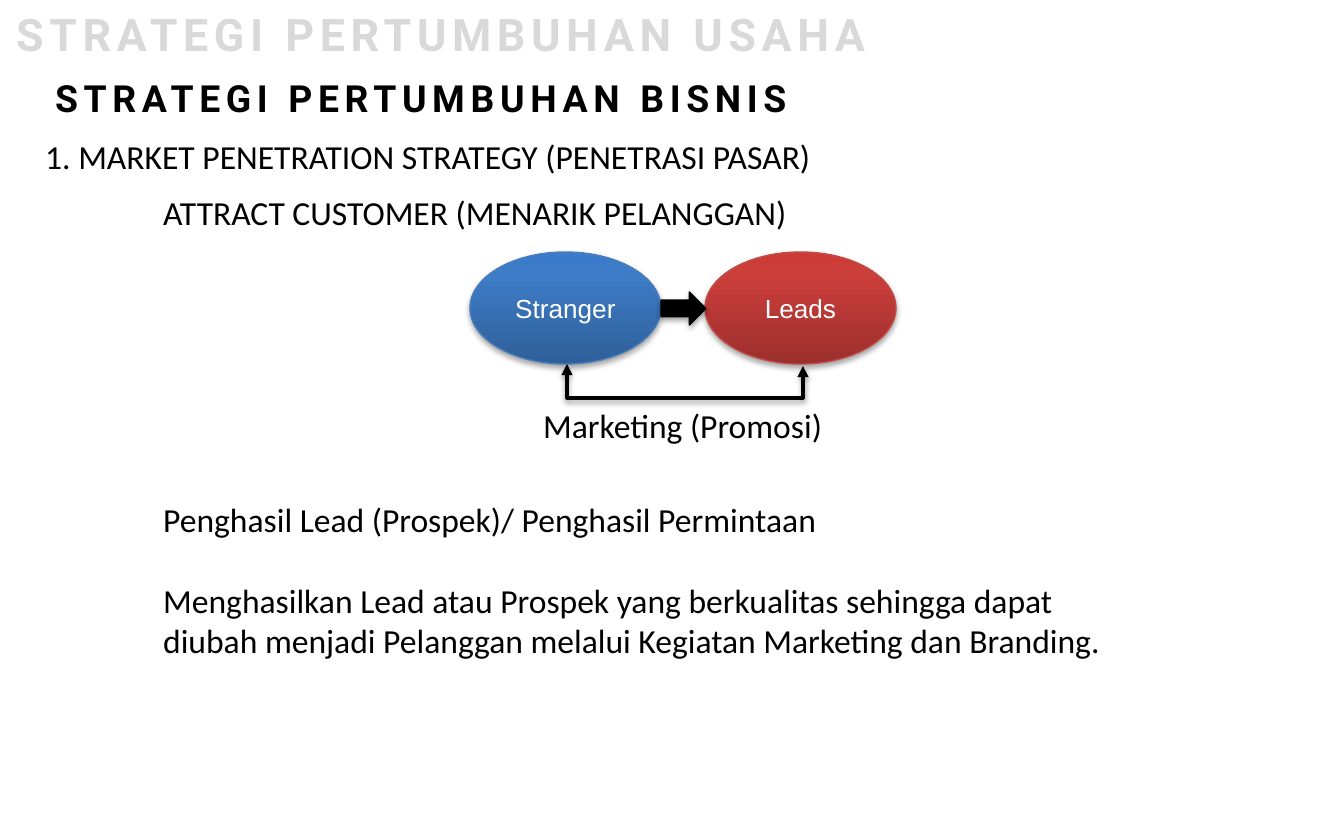
from copy import deepcopy

from lxml.etree import SubElement
from pptx import Presentation
from pptx.dml.color import RGBColor
from pptx.enum.shapes import MSO_CONNECTOR, MSO_SHAPE
from pptx.enum.text import MSO_ANCHOR, MSO_AUTO_SIZE, PP_ALIGN
from pptx.oxml.ns import qn
from pptx.util import Emu, Pt

SCALE = 914400 / 134.4
BLACK = RGBColor(0x00, 0x00, 0x00)
WHITE = RGBColor(0xFF, 0xFF, 0xFF)
GREY = RGBColor(0xD9, 0xD9, 0xD9)
BLUE_LINE = RGBColor(0x4B, 0x7E, 0xBC)
BLUES = [RGBColor(0x2F, 0x5F, 0x99), RGBColor(0x3D, 0x7C, 0xC7), RGBColor(0x3A, 0x7C, 0xCB)]
RED_LINE = RGBColor(0xBF, 0x4C, 0x48)
REDS = [RGBColor(0x9C, 0x2F, 0x2D), RGBColor(0xCB, 0x3E, 0x3A), RGBColor(0xCE, 0x3B, 0x37)]


def px(*lengths):
    return [Emu(round(length * SCALE)) for length in lengths]


def add_soft_shadow(item, opacity):
    effects = SubElement(item._element.spPr, qn("a:effectLst"))
    shadow = SubElement(effects, qn("a:outerShdw"), blurRad=str(Pt(3.1)),
                        dist=str(Pt(1.8)), dir="5400000", rotWithShape="0")
    color = SubElement(shadow, qn("a:srgbClr"), val="000000")
    SubElement(color, qn("a:alpha"), val=str(opacity * 1000))


deck = Presentation()
deck.slide_width, deck.slide_height = px(1344, 840)
page = deck.slides.add_slide(deck.slide_layouts[6])

# Stranger and Leads ellipses
for name, left, colors, line_color in [
    ("Stranger", 470, BLUES, BLUE_LINE),
    ("Leads", 705, REDS, RED_LINE),
]:
    ellipse = page.shapes.add_shape(MSO_SHAPE.OVAL, *px(left, 252, 191, 112))
    ellipse.fill.gradient()
    ellipse.fill.gradient_angle = 90
    stop_list = ellipse._element.spPr.find(".//" + qn("a:gsLst"))
    stop_list.insert(1, deepcopy(stop_list[0]))
    for stop, position, color in zip(ellipse.fill.gradient_stops, (0, 0.8, 1), colors):
        stop.position = position
        stop.color.rgb = color
    ellipse.line.color.rgb = line_color
    ellipse.line.width = Pt(0.75)
    add_soft_shadow(ellipse, 35)
    ellipse.text_frame.vertical_anchor = MSO_ANCHOR.MIDDLE
    para = ellipse.text_frame.paragraphs[0]
    para.text = name
    para.alignment = PP_ALIGN.CENTER
    para.font.name = "Arial"
    para.font.size = Pt(14)
    para.font.color.rgb = WHITE

# Block arrow between the ellipses
arrow = page.shapes.add_shape(MSO_SHAPE.RIGHT_ARROW, *px(661, 292, 45, 33))
arrow.fill.solid()
arrow.fill.fore_color.rgb = BLACK
arrow.line.color.rgb = BLACK
arrow.line.width = Pt(0.75)
add_soft_shadow(arrow, 35)

# Bracket under the ellipses: an elbow turned a quarter, bulging downwards
bracket = page.shapes.add_connector(MSO_CONNECTOR.ELBOW, *px(686, 247, 684, 483))
bracket.line.color.rgb = BLACK
bracket.line.width = Pt(2)
properties = bracket._element.spPr
properties.find(qn("a:xfrm")).set("rot", "16200000")
adjustments = properties.find(qn("a:prstGeom")).find(qn("a:avLst"))
SubElement(adjustments, qn("a:gd"), name="adj1", fmla="val 1680000")
line = properties.find(qn("a:ln"))
for end in ("a:headEnd", "a:tailEnd"):
    SubElement(line, qn(end), type="triangle")
add_soft_shadow(bracket, 38)

# Texts: place, wrap, font, size, bold, letter spacing, colour, paragraphs
BODY = ("Calibri", 18, False, 0, BLACK)
for place, wrap, (font, size, bold, spacing, color), lines in [
    ((32, 129, 800, 54), False, BODY, ["1. MARKET PENETRATION STRATEGY (PENETRASI PASAR)"]),
    ((42, 69, 1266, 59), True, ("Roboto", 20, True, 3, BLACK), ["STRATEGI PERTUMBUHAN BISNIS"]),
    ((530, 398, 309, 54), False, BODY, ["Marketing (Promosi)"]),
    ((150, 492, 992, 218), True, BODY, [
        "Penghasil Lead (Prospek)/ Penghasil Permintaan",
        "Menghasilkan Lead atau Prospek yang berkualitas sehingga dapat diubah "
        "menjadi Pelanggan melalui Kegiatan Marketing dan Branding.",
    ]),
    ((150, 185, 656, 54), False, BODY, ["ATTRACT CUSTOMER (MENARIK PELANGGAN)"]),
    ((3, 0, 1344, 67), True, ("Roboto", 24, True, 3, GREY), ["STRATEGI PERTUMBUHAN USAHA"]),
]:
    box = page.shapes.add_textbox(*px(*place))
    frame = box.text_frame
    frame.word_wrap = wrap
    frame.auto_size = MSO_AUTO_SIZE.SHAPE_TO_FIT_TEXT
    for index, words in enumerate(lines):
        para = frame.add_paragraph() if index else frame.paragraphs[0]
        if index:
            para.space_before = Pt(22)
        span = para.add_run()
        span.text = words
        if spacing:
            span._r.get_or_add_rPr().set("spc", str(spacing * 100))
        para.font.name = font
        para.font.size = Pt(size)
        para.font.bold = bold
        para.font.color.rgb = color

deck.save("out.pptx")
